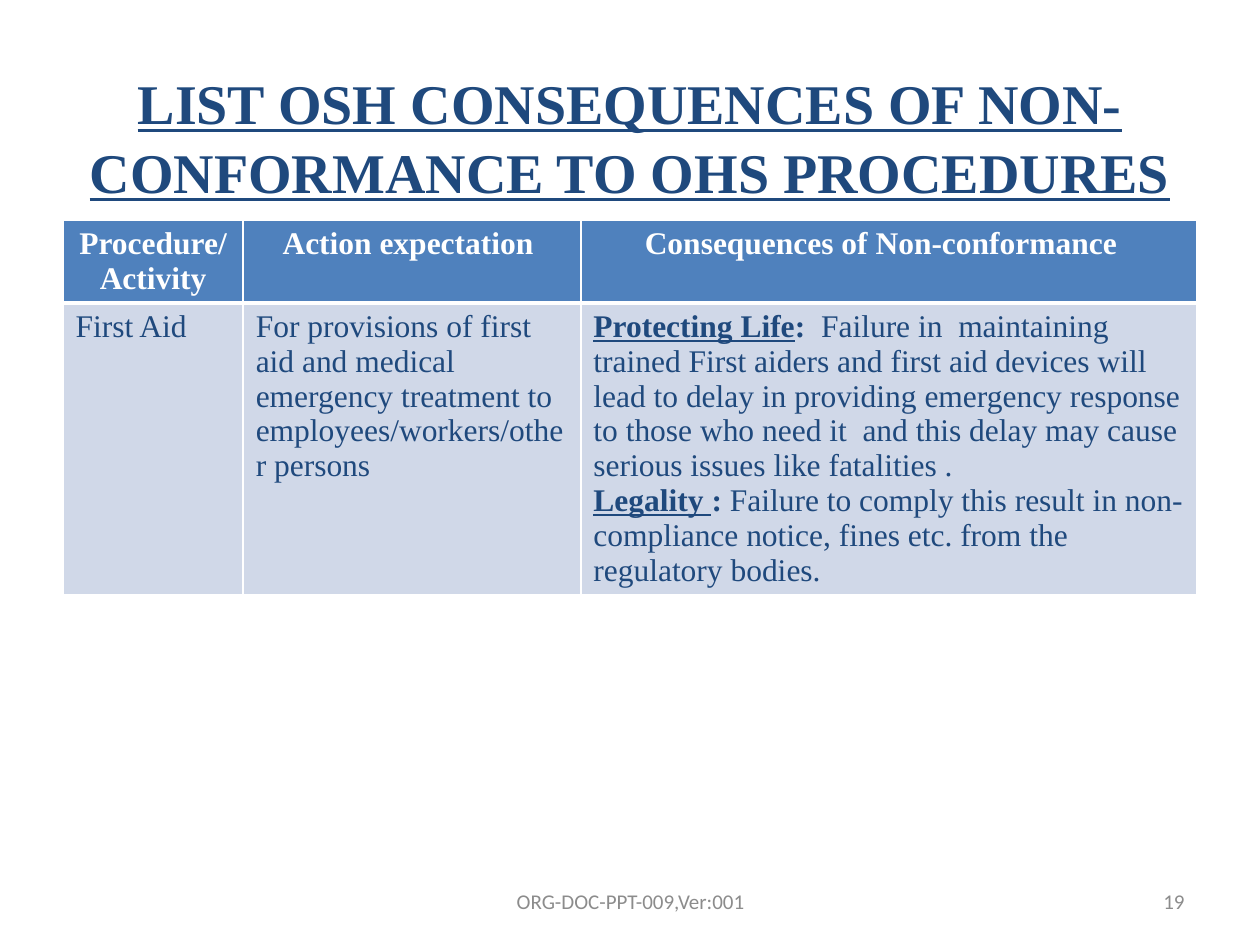
from lxml.etree import SubElement
from pptx import Presentation
from pptx.dml.color import RGBColor
from pptx.enum.text import MSO_ANCHOR, MSO_AUTO_SIZE, PP_ALIGN
from pptx.oxml.ns import qn
from pptx.util import Inches, Pt

NAVY, BLUE, PALE, WHITE, GRAY = "1F497D", "4F81BD", "D0D8E8", "FFFFFF", "8C8C8C"
SERIF, SANS = "Times New Roman", "Calibri"


def color(hex_string):
    return RGBColor.from_string(hex_string)


class SlideBuilder:
    """Holds the text styles and the current slide."""

    title_style = {"name": SERIF, "size": Pt(32), "bold": True, "underline": True}
    table_style = {"name": SERIF, "size": Pt(18)}
    footer_style = {"name": SANS, "size": Pt(12)}

    def __init__(self, slide):
        self.slide = slide

    def add_run(self, paragraph, text, ink, style):
        run = paragraph.add_run()
        run.text = text
        for attribute, value in style.items():
            setattr(run.font, attribute, value)
        run.font.color.rgb = color(ink)

    def title(self, text, left, top, width, height):
        heading = self.slide.shapes.title
        heading.left, heading.top = Inches(left), Inches(top)
        heading.width, heading.height = Inches(width), Inches(height)
        frame = heading.text_frame
        frame.auto_size = MSO_AUTO_SIZE.NONE
        frame.vertical_anchor = MSO_ANCHOR.MIDDLE
        paragraph = frame.paragraphs[0]
        paragraph.alignment = PP_ALIGN.CENTER
        paragraph.line_spacing = Pt(39)
        self.add_run(paragraph, text, NAVY, self.title_style)

    def borders(self, cell, widths):
        properties = cell._tc.get_or_add_tcPr()
        for side, points in widths.items():
            line = SubElement(properties, qn(f"a:{side}"), w=str(Pt(points)))
            fill = SubElement(line, qn("a:solidFill"))
            SubElement(fill, qn("a:srgbClr"), val=WHITE)

    def cell(self, cell, paragraphs, fill, ink, alignment, bottom_border):
        self.borders(cell, {"lnL": 1, "lnR": 1, "lnT": 1, "lnB": bottom_border})
        cell.fill.solid()
        cell.fill.fore_color.rgb = color(fill)
        frame = cell.text_frame
        for index, runs in enumerate(paragraphs):
            paragraph = frame.add_paragraph() if index else frame.paragraphs[0]
            paragraph.alignment = alignment
            for text, emphasis in runs:
                self.add_run(paragraph, text, ink, self.table_style | emphasis)

    def table(self, header, body, left, top, column_widths, row_height):
        grid = self.slide.shapes.add_table(
            2, len(header), Inches(left), Inches(top),
            Inches(sum(column_widths)), Inches(2 * row_height)).table
        for row in grid.rows:
            row.height = Inches(row_height)
        for index, width in enumerate(column_widths):
            grid.columns[index].width = Inches(width)
            self.cell(grid.cell(0, index), [[(header[index], BOLD)]],
                      BLUE, WHITE, PP_ALIGN.CENTER, 3)
            self.cell(grid.cell(1, index), body[index],
                      PALE, NAVY, PP_ALIGN.LEFT, 1)

    def footer(self, text, left, width, alignment):
        box = self.slide.shapes.add_textbox(
            Inches(left), Inches(6.95), Inches(width), Inches(0.4))
        frame = box.text_frame
        frame.word_wrap = True
        frame.vertical_anchor = MSO_ANCHOR.MIDDLE
        frame.paragraphs[0].alignment = alignment
        self.add_run(frame.paragraphs[0], text, GRAY, self.footer_style)


# Emphasis used inside the table
PLAIN = {"bold": False}
BOLD = {"bold": True}
LEAD = {"bold": True, "underline": True}

HEADER = ["Procedure/Activity", "Action expectation ",
          "Consequences of Non-conformance  "]
FIRST_AID = [
    [[("First Aid", PLAIN)]],
    [[("For provisions of first aid and medical emergency treatment to "
       "employees/workers/other persons", PLAIN)]],
    [[("Protecting Life", LEAD), (": ", BOLD),
      (" Failure in  maintaining trained First aiders and first aid devices "
       "will lead to delay in providing emergency response to those who need "
       "it  and this delay may cause serious issues like fatalities .", PLAIN)],
     [("Legality ", LEAD), (": ", BOLD),
      ("Failure to comply this result in non-compliance notice, fines etc. "
       "from the regulatory bodies.", PLAIN)]],
]


def main():
    presentation = Presentation()
    presentation.slide_width, presentation.slide_height = Inches(10), Inches(7.5)
    title_only = presentation.slide_layouts[5]
    builder = SlideBuilder(presentation.slides.add_slide(title_only))

    # Heading
    builder.title("LIST OSH CONSEQUENCES OF NON-CONFORMANCE TO OHS PROCEDURES",
                  0.5, 0.3, 9, 1.56)

    # Procedure table
    builder.table(HEADER, FIRST_AID, 0.5, 1.75, [1.43, 2.68, 4.89], 0.41)

    # Slide number and document code
    builder.footer("19", 7.17, 2.33, PP_ALIGN.RIGHT)
    builder.footer("ORG-DOC-PPT-009,Ver:001", 3.42, 3.17, PP_ALIGN.CENTER)

    presentation.save("out.pptx")


if __name__ == "__main__":
    main()
